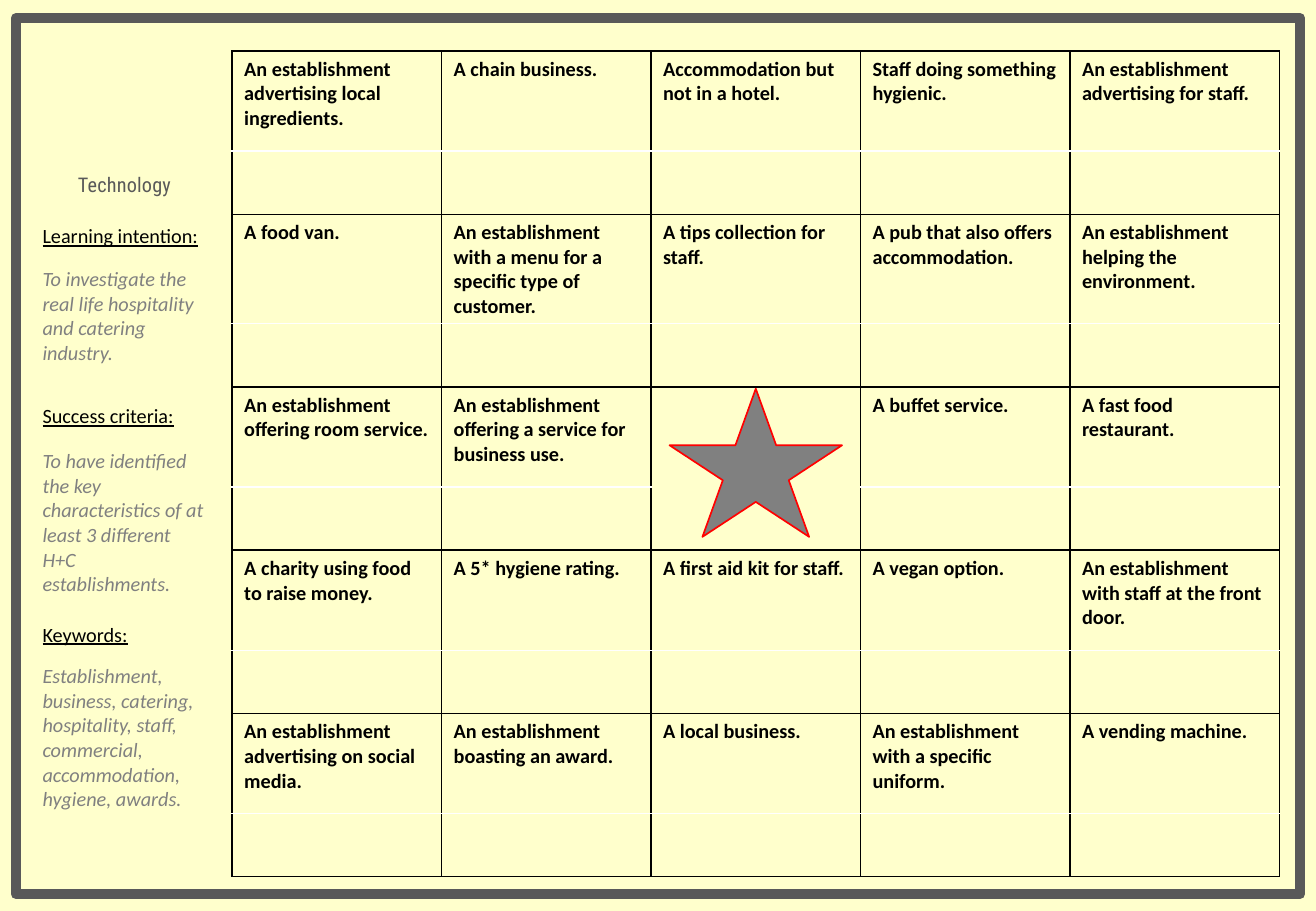
from lxml.etree import SubElement
from pptx import Presentation
from pptx.dml.color import RGBColor
from pptx.enum.shapes import MSO_SHAPE
from pptx.enum.text import PP_ALIGN
from pptx.oxml.ns import qn
from pptx.util import Inches, Pt

COLOURS = {
    "page": "FFFFCC",
    "frame": "595959",
    "black": "000000",
    "grey": "808080",
    "white": "FFFFFF",
    "red": "FF0000",
}

LESSON = [
    ("Learning intention:", 0.35),
    ("To investigate the real life hospitality and catering industry.", 1.13),
    ("Success criteria:", 0.37),
    ("To have identified the key characteristics of at least 3 different H+C establishments.", 1.43),
    ("Keywords:", 0.34),
    ("Establishment, business, catering, hospitality, staff, commercial, "
     "accommodation, hygiene, awards.", 1.46),
]

CHALLENGES = [
    ["An establishment advertising local ingredients.", "A chain business.",
     "Accommodation but not in a hotel.", "Staff doing something hygienic.",
     "An establishment advertising for staff."],
    ["A food van.", "An establishment with a menu for a specific type of customer.",
     "A tips collection for staff.", "A pub that also offers accommodation.",
     "An establishment helping the environment."],
    ["An establishment offering room service.",
     "An establishment offering a service for business use.", "",
     "A buffet service.", "A fast food restaurant."],
    ["A charity using food to raise money.", "A 5* hygiene rating.",
     "A first aid kit for staff.", "A vegan option.",
     "An establishment with staff at the front door."],
    ["An establishment advertising on social media.",
     "An establishment boasting an award.", "A local business.",
     "An establishment with a specific uniform.", "A vending machine."],
]


def rgb(name):
    return RGBColor.from_string(COLOURS[name])


def write(text_frame, text, colour="black", font="Calibri", size=12,
          bold=False, italic=False, underline=False, align=PP_ALIGN.LEFT, spacing=None):
    paragraph = text_frame.paragraphs[0]
    paragraph.alignment = align
    run = paragraph.add_run()
    run.text = text
    run.font.name = font
    run.font.size = Pt(size)
    run.font.bold = bold
    run.font.italic = italic
    run.font.underline = underline
    run.font.color.rgb = rgb(colour)
    if spacing is not None:
        run.font._element.set("spc", str(round(spacing * 100)))


class BingoSlide:
    def __init__(self, presentation):
        self.slide = presentation.slides.add_slide(presentation.slide_layouts[6])
        self.slide.background.fill.solid()
        self.slide.background.fill.fore_color.rgb = rgb("page")

    def shape(self, preset, left, top, width, height, line, line_width, fill=None):
        shape = self.slide.shapes.add_shape(
            preset, Inches(left), Inches(top), Inches(width), Inches(height))
        shape.shadow.inherit = False
        shape.line.color.rgb = rgb(line)
        shape.line.width = Pt(line_width)
        if fill:
            shape.fill.solid()
            shape.fill.fore_color.rgb = rgb(fill)
        else:
            shape.fill.background()

    def label(self, text, left, top, width, height, **text_format):
        box = self.slide.shapes.add_textbox(
            Inches(left), Inches(top), Inches(width), Inches(height))
        box.text_frame.word_wrap = True
        write(box.text_frame, text, **text_format)

    def table(self, left, top, widths, heights):
        table = self.slide.shapes.add_table(
            len(heights), len(widths), Inches(left), Inches(top),
            Inches(sum(widths)), Inches(sum(heights))).table
        table.first_row = False
        table.horz_banding = False
        for column, width in zip(table.columns, widths):
            column.width = Inches(width)
        for row, height in zip(table.rows, heights):
            row.height = Inches(height)
        return table

    def cell(self, cell, left=None, right=None, top=None, bottom=None):
        properties = cell._tc.get_or_add_tcPr()
        for side, colour in zip("LRTB", (left, right, top, bottom)):
            border = SubElement(properties, qn(f"a:ln{side}"), w=str(Pt(1)))
            if colour:
                fill = SubElement(border, qn("a:solidFill"))
                SubElement(fill, qn("a:srgbClr"), val=COLOURS[colour])
            else:
                SubElement(border, qn("a:noFill"))
        cell.fill.background()


def add_lesson(page):
    lesson = page.table(0.25, 1.8, [1.55], [height for _, height in LESSON])
    for index, (text, _) in enumerate(LESSON):
        cell = lesson.cell(index, 0)
        page.cell(cell)
        heading = index % 2 == 0
        write(cell.text_frame, text, colour="black" if heading else "grey",
              underline=heading, italic=not heading)


def add_challenges(page):
    grid = page.table(1.91, 0.42, [1.724] * 5, [0.825, 0.52] * 5)
    for row, challenges in enumerate(CHALLENGES):
        for column, challenge in enumerate(challenges):
            prompt, answer = (grid.cell(2 * row + half, column) for half in (0, 1))
            divider = "white" if challenge else "black"
            page.cell(prompt, "black", "black", "black", divider)
            page.cell(answer, "black", "black", divider, "black")
            if challenge:
                write(prompt.text_frame, challenge, bold=True)
            else:
                prompt.merge(answer)


def main():
    presentation = Presentation()
    presentation.slide_width = Inches(10.83)
    presentation.slide_height = Inches(7.5)
    page = BingoSlide(presentation)
    page.shape(MSO_SHAPE.RECTANGLE, 0.13, 0.15, 10.57, 7.21, "frame", 6)
    page.label("Technology", 0.35, 1.37, 1.35, 0.3, colour="frame",
               font="Roboto Condensed", align=PP_ALIGN.CENTER, spacing=0.1)
    add_lesson(page)
    add_challenges(page)
    page.shape(MSO_SHAPE.STAR_5_POINT, 5.51, 3.2, 1.42, 1.22, "red", 1, fill="grey")
    presentation.save("out.pptx")


if __name__ == "__main__":
    main()
